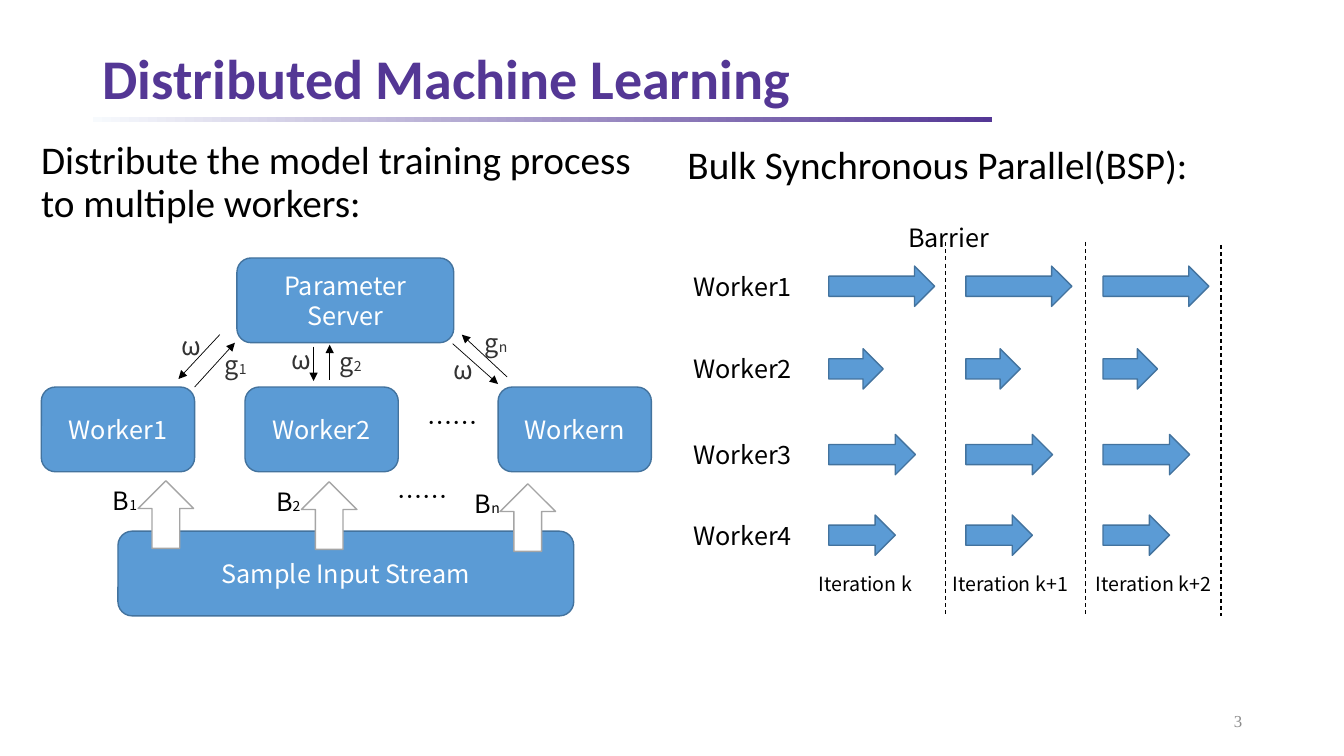
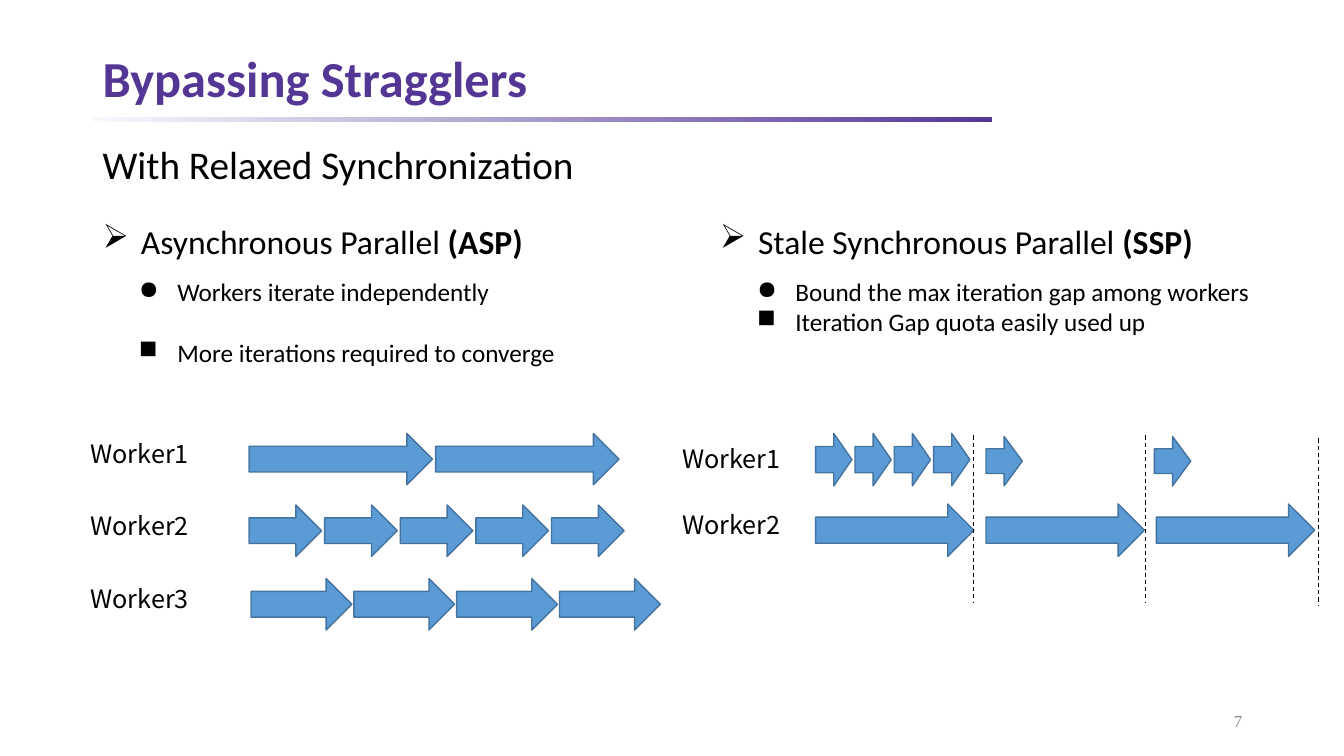
from lxml.etree import SubElement
from pptx import Presentation
from pptx.dml.color import RGBColor as RGB
from pptx.enum.dml import MSO_LINE as Dash
from pptx.enum.shapes import MSO_CONNECTOR as Link, MSO_SHAPE as Form
from pptx.enum.text import MSO_ANCHOR as Anchor, PP_ALIGN as Align
from pptx.oxml.ns import qn
from pptx.util import Emu, Pt

PX = 9144  # 100 px to the inch
SIZE = (1333, 750)
SANS, CJK = "Calibri", "Noto Sans CJK SC"


class Theme:
    purple, pale = "543795", "F7FAFD"
    blue, edge = "5B9BD5", "43739E"
    white, gray = "FFFFFF", "A5A5A5"
    black = "000000"
    title = dict(name=SANS, size=40, color=purple, bold=True)
    title2 = dict(title, size=36)
    lead = dict(name=SANS, size=28, color=black)
    head = dict(name=SANS, size=24, color=black)
    point = dict(name=SANS, size=18, color=black)
    label = dict(name=CJK, size=18, color=black)
    symbol = dict(label, color="333333")
    node = dict(label, color=white)
    step = dict(label, size=14)
    page = dict(name="Times New Roman", size=12, color="8C8C8C")
    sub = dict(size=10)
    strong = dict(bold=True)


TITLE = (92, 43, 1150, 75)
RULE = (92, 116, 892, 5)
PAGE = (942, 695, 300, 40)
TIGHT = dict(line_spacing=0.9)

# Slide 1: text, box
LEADS = [
    ("Distribute the model training process to multiple workers:",
     (31, 135, 612, 130)),
    ("Bulk Synchronous Parallel(BSP):", (672, 140, 599, 66)),
]
NODES = [
    ("Worker1", (41, 384, 152, 84)),
    ("Worker2", (243, 384, 152, 84)),
    ("Workern", (494, 384, 152, 84)),
    ("Parameter Server", (235, 256, 215, 84)),
    ("Sample Input Stream", (117, 527, 452, 84)),
]
FLOWS = [
    (193, 384, 233, 340), (218, 332, 177, 376),
    (311, 344, 311, 378), (327, 377, 327, 342),
    (449, 341, 494, 381), (503, 374, 458, 332),
]
SYMBOLS = [
    (("ω",), 170, 323, 34), (("g", "1"), 213, 342, 57),
    (("ω",), 279, 337, 34), (("g", "2"), 327, 339, 57),
    (("ω",), 440, 347, 34), (("g", "n"), 471, 320, 57),
]
BATCHES = [("1", 102, 477), ("2", 264, 478), ("n", 461, 480)]
DOTS = [(414, 399), (384, 473)]
# name, top, arrow width
BSP = [("Worker1", 264, 105), ("Worker2", 346, 54),
       ("Worker3", 431, 86), ("Worker4", 511, 66)]
ROUNDS = [("Iteration k", 802, 128), ("Iteration k+1", 935, 163),
          ("Iteration k+2", 1077, 160)]
BARS = [(938, 240, 611), (1077, 240, 611), (1211, 243, 611)]

# Slide 2: heading, left, points, points box
MODES = [
    (("Asynchronous Parallel ", "(ASP)"), 92,
     ["Workers iterate independently",
      "More iterations required to converge"], (128, 269, 609, 131), 22),
    (("Stale Synchronous Parallel ", "(SSP)"), 704,
     ["Bound the max iteration gap among workers",
      "Iteration Gap quota easily used up"], (741, 269, 532, 101), 0),
]
NAMES = [("Worker1", 80, 430), ("Worker2", 80, 501), ("Worker3", 80, 574),
         ("Worker1", 667, 435), ("Worker2", 667, 500)]
# left, top, width, height, count, pitch
RUNS = [
    (247, 430, 182, 51, 2, 185),
    (247, 501, 72, 51, 5, 75),
    (249, 574, 100, 51, 4, 102),
    (809, 430, 36, 52, 4, 39),
    (978, 433, 36, 49, 2, 167),
    (809, 500, 157, 52, 3, 169),
]
LIMITS = [(966, 432, 598), (1136, 432, 598), (1308, 435, 601)]


def emu(*vals):
    return [Emu(v * PX) for v in vals]


def fill_run(para, text, style):
    run = para.add_run()
    run.text = text
    font = run.font
    vals = dict(style, size=Pt(style["size"]))
    font.color.rgb = RGB.from_string(vals.pop("color"))
    for key, val in vals.items():
        setattr(font, key, val)
    SubElement(font._element, qn("a:ea"), typeface=style["name"])


def bullet(para, mark):
    """Give the paragraph a hanging bullet."""
    props = para._p.get_or_add_pPr()
    props.set("marL", str(38 * PX))
    props.set("indent", str(-38 * PX))
    SubElement(props, qn("a:buChar"), char=mark)


def write(para, runs, style, tail=None, mark=None, **form):
    """Write runs; those after the first also take the tail style."""
    if mark:
        bullet(para, mark)
    for key, val in form.items():
        setattr(para, key, val)
    for i, text in enumerate(runs):
        fill_run(para, text, {**style, **(tail or {})} if i else style)


def frame(slide, box, anchor=Anchor.TOP):
    area = slide.shapes.add_textbox(*emu(*box)).text_frame
    area.word_wrap = True
    area.vertical_anchor = anchor
    return area


def label(slide, runs, box, style, anchor=Anchor.TOP, **form):
    write(frame(slide, box, anchor).paragraphs[0], runs, style, **form)


def block(slide, form, box, fill=Theme.blue, edge=Theme.edge):
    shape = slide.shapes.add_shape(form, *emu(*box))
    shape.shadow.inherit = False
    shape.fill.solid()
    shape.fill.fore_color.rgb = RGB.from_string(fill)
    shape.line.color.rgb = RGB.from_string(edge)
    shape.line.width = Pt(1)
    return shape


def arrows(slide, left, top, wide, high, count, pitch):
    for i in range(count):
        block(slide, Form.RIGHT_ARROW, (left + i * pitch, top, wide, high))


def link(slide, ends, width, dash=None, tip=False):
    conn = slide.shapes.add_connector(Link.STRAIGHT, *emu(*ends))
    conn.line.color.rgb = RGB.from_string(Theme.black)
    conn.line.width = Pt(width)
    if dash:
        conn.line.dash_style = dash
    props = conn.element.spPr
    if tip:
        SubElement(props.find(qn("a:ln")), qn("a:tailEnd"), type="triangle")
    SubElement(props, qn("a:effectLst"))


def barriers(slide, bars):
    for x, top, end in bars:
        link(slide, (x, top, x, end), 0.75, dash=Dash.DASH)


def base(deck, title, style, page):
    """Add a slide with title, fading rule and page number."""
    slide = deck.slides.add_slide(deck.slide_layouts[6])
    rule = block(slide, Form.RECTANGLE, RULE)
    rule.line.fill.background()
    rule.fill.gradient()
    rule.fill.gradient_angle = 0
    for stop, color in zip(rule.fill.gradient_stops,
                           (Theme.pale, Theme.purple)):
        stop.color.rgb = RGB.from_string(color)
    label(slide, [title], TITLE, style, Anchor.MIDDLE, **TIGHT)
    label(slide, [page], PAGE, Theme.page, Anchor.MIDDLE,
          alignment=Align.RIGHT)
    return slide


def training(deck):
    slide = base(deck, "Distributed Machine Learning", Theme.title, "3")
    for text, box in LEADS:
        label(slide, [text], box, Theme.lead, **TIGHT)
    for name, top, wide in BSP:
        label(slide, [name], (678, top, 128, 40), Theme.label)
        arrows(slide, 822, top, wide, 40, 3, 136)
    barriers(slide, BARS)
    for text, left, wide in ROUNDS:
        label(slide, [text], (left, 562, wide, 34), Theme.step)
    label(slide, ["Barrier"], (891, 216, 124, 40), Theme.label)

    for text, box in NODES:
        area = block(slide, Form.ROUNDED_RECTANGLE, box).text_frame
        area.word_wrap = True
        area.vertical_anchor = Anchor.MIDDLE
        write(area.paragraphs[0], [text], Theme.node, alignment=Align.CENTER)
    for ends in FLOWS:
        link(slide, ends, 0.5, tip=True)
    for runs, left, top, wide in SYMBOLS:
        label(slide, runs, (left, top, wide, 40), Theme.symbol,
              tail=Theme.sub)
    for num, left, top in BATCHES:
        block(slide, Form.UP_ARROW, (left + 35, top, 55, 67),
              Theme.white, Theme.gray)
        label(slide, ("B", num), (left, top, 49, 40), Theme.label,
              tail=Theme.sub)
    for left, top in DOTS:
        label(slide, ["……"], (left, top, 75, 40), Theme.label)


def bypass(deck):
    slide = base(deck, "Bypassing Stragglers", Theme.title2, "7")
    label(slide, ["With Relaxed Synchronization"], (92, 140, 706, 53),
          Theme.lead, **TIGHT)
    for head, left, points, box, gap in MODES:
        label(slide, head, (left, 214, 612, 50), Theme.head,
              tail=Theme.strong, mark="➢")
        area = frame(slide, box)
        first, last = area.paragraphs[0], area.add_paragraph()
        write(first, points[:1], Theme.point, mark="●")
        write(last, points[1:], Theme.point, mark="■", space_before=Pt(gap))
    for name, left, top in NAMES:
        label(slide, [name], (left, top, 149, 40), Theme.label)
    for run in RUNS:
        arrows(slide, *run)
    barriers(slide, LIMITS)


def main():
    deck = Presentation()
    deck.slide_width, deck.slide_height = emu(*SIZE)
    training(deck)
    bypass(deck)
    deck.save("out.pptx")


if __name__ == "__main__":
    main()
